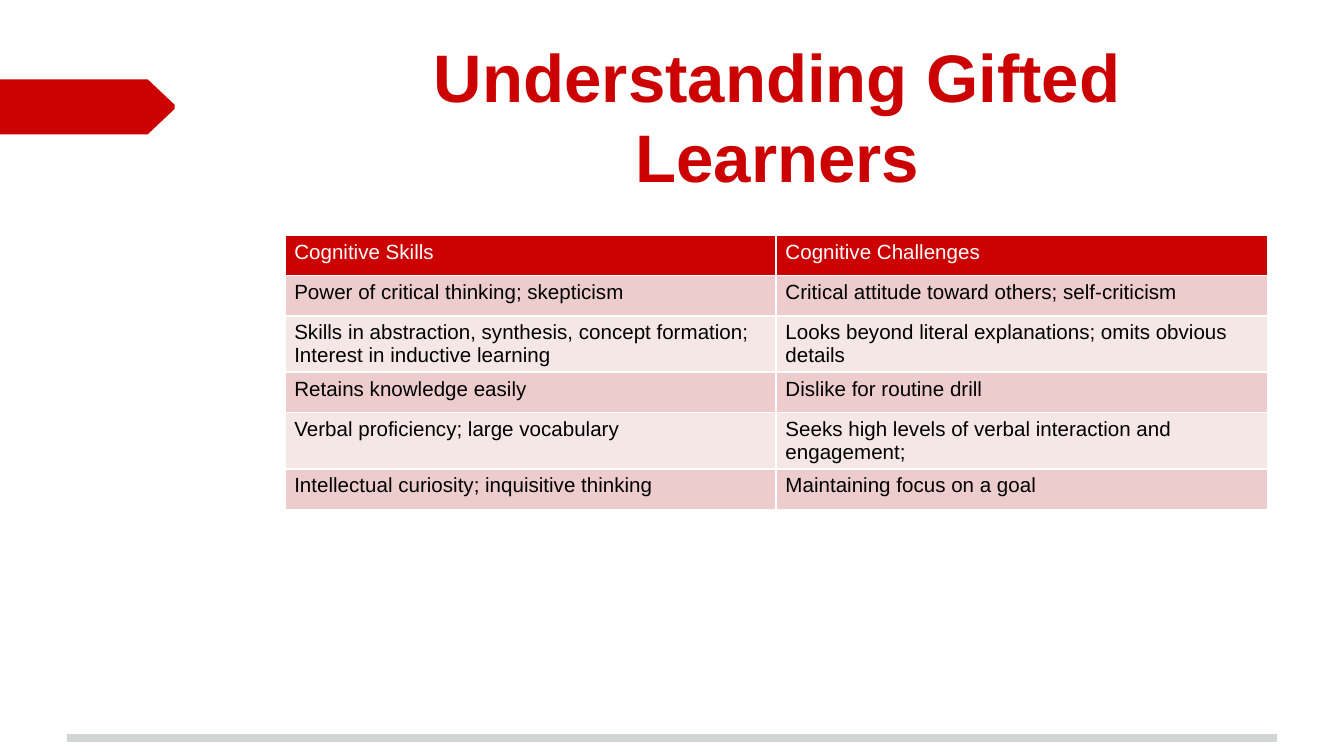
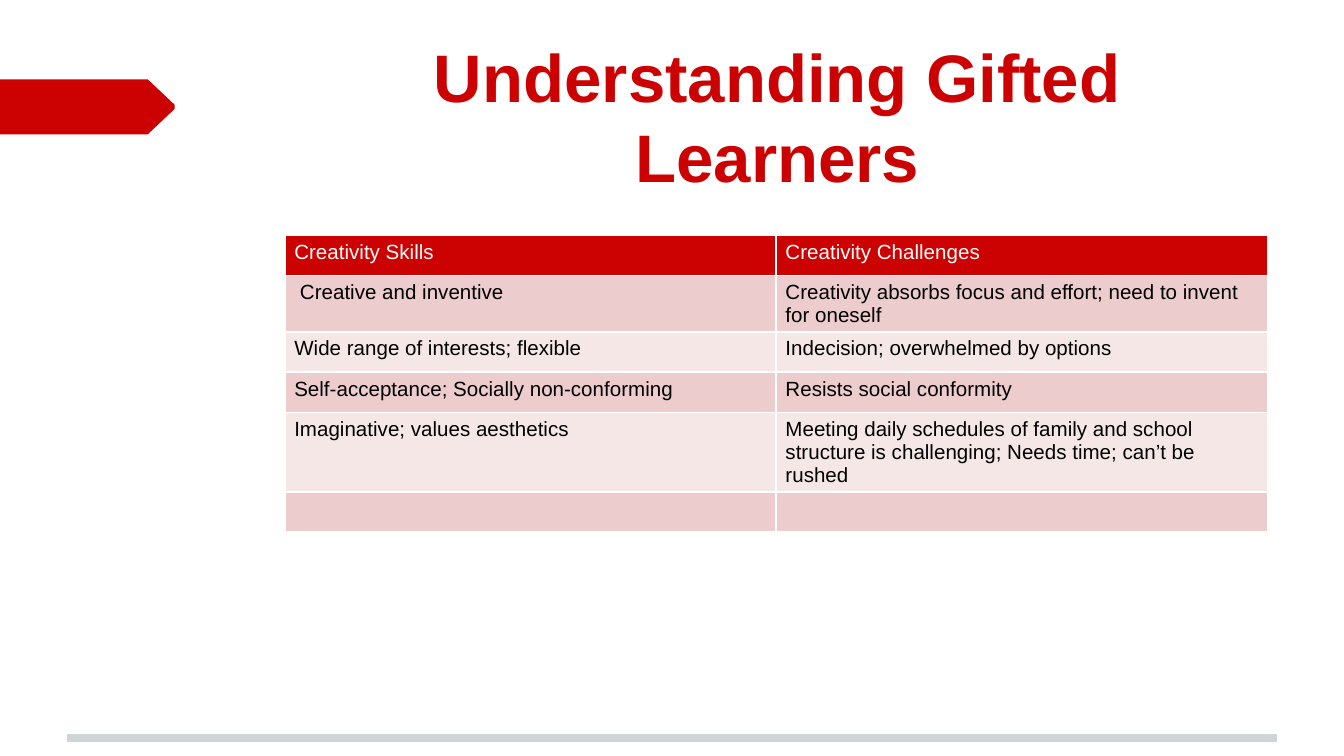
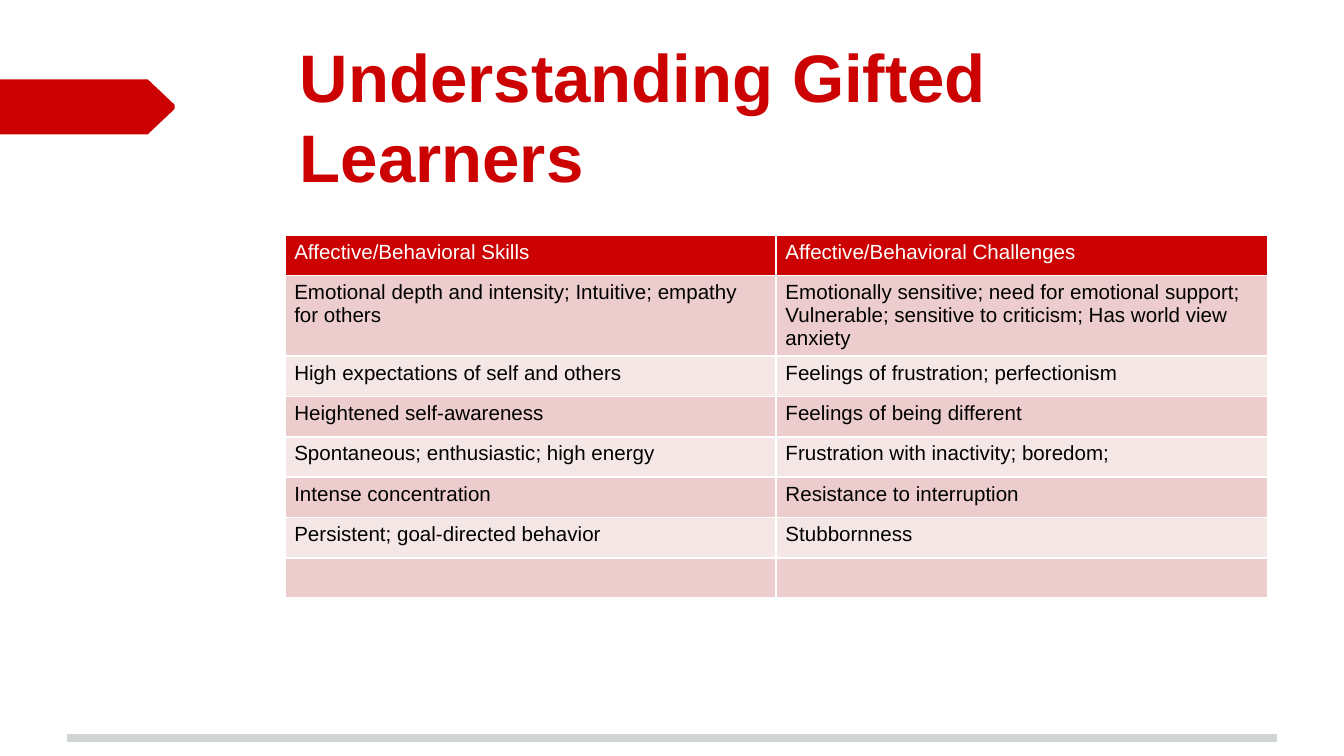
from dataclasses import dataclass

from lxml import etree
from pptx import Presentation
from pptx import util as u
from pptx.dml.color import RGBColor
from pptx.enum import shapes, text
from pptx.oxml import ns


@dataclass(frozen=True)
class Theme:
    font: str = "Arial"
    red: str = "CC0202"
    band_dark: str = "ECCCCC"
    band_light: str = "F6E7E7"
    white: str = "FFFFFF"
    black: str = "000000"
    rule: str = "CFD4D4"
    title_size: int = 36
    table_size: int = 11


THEME = Theme()
TITLE = "Understanding Gifted Learners"
ROW_HEIGHTS = {1: 0.3, 2: 0.42, 3: 0.6}  # by lines of text
CENTER, LEFT = text.PP_ALIGN.CENTER, text.PP_ALIGN.LEFT

# Title alignment and table rows (lines, skill, challenge) of each slide
SLIDES = [
    (CENTER, [
        (1, "Cognitive Skills", "Cognitive Challenges"),
        (1, "Power of critical thinking; skepticism",
         "Critical attitude toward others; self-criticism"),
        (2, "Skills in abstraction, synthesis, concept formation; Interest in inductive learning",
         "Looks beyond literal explanations; omits obvious details"),
        (1, "Retains knowledge easily", "Dislike for routine drill"),
        (2, "Verbal proficiency; large vocabulary",
         "Seeks high levels of verbal interaction and engagement;"),
        (1, "Intellectual curiosity; inquisitive thinking", "Maintaining focus on a goal"),
    ]),
    (CENTER, [
        (1, "Creativity Skills", "Creativity Challenges"),
        (2, " Creative and inventive",
         "Creativity absorbs focus and effort; need to invent for oneself"),
        (1, "Wide range of interests; flexible", "Indecision; overwhelmed by options"),
        (1, "Self-acceptance; Socially non-conforming", "Resists social conformity"),
        (2, "Imaginative; values aesthetics",
         "Meeting daily schedules of family and school structure is challenging; "
         "Needs time; can’t be rushed"),
        (1, "", ""),
    ]),
    (LEFT, [
        (1, "Affective/Behavioral Skills", "Affective/Behavioral Challenges"),
        (3, "Emotional depth and intensity; Intuitive; empathy for others",
         "Emotionally sensitive; need for emotional support; Vulnerable; "
         "sensitive to criticism; Has world view anxiety"),
        (1, "High expectations of self and others", "Feelings of frustration; perfectionism"),
        (1, "Heightened self-awareness", "Feelings of being different"),
        (1, "Spontaneous; enthusiastic; high energy", "Frustration with inactivity; boredom;"),
        (1, "Intense concentration", "Resistance to interruption"),
        (1, "Persistent; goal-directed behavior", "Stubbornness"),
        (1, "", ""),
    ]),
]


def color(value):
    return RGBColor.from_string(value)


def style_font(font, size, value, bold=False):
    font.name, font.size, font.bold = THEME.font, u.Pt(size), bold
    font.color.rgb = color(value)


def set_margins(target, horizontal, vertical):
    target.margin_left = target.margin_right = u.Inches(horizontal)
    target.margin_top = target.margin_bottom = u.Inches(vertical)


def add_footer_rule(slide):
    line = slide.shapes.add_connector(
        shapes.MSO_CONNECTOR.STRAIGHT,
        u.Inches(0.5), u.Inches(5.49), u.Inches(9.5), u.Inches(5.49))
    line.line.color.rgb = color(THEME.rule)
    line.line.width = u.Pt(4)
    etree.SubElement(line.element.spPr, ns.qn("a:effectLst"))
    return line


def add_arrow_tab(slide):
    outline = [(1.1, 0.59), (1.11, 0.6), (1.3, 0.78), (1.3, 0.81),
               (1.11, 0.99), (1.1, 1), (0, 1)]
    builder = slide.shapes.build_freeform(0, u.Inches(0.59))
    builder.add_line_segments([(u.Inches(x), u.Inches(y)) for x, y in outline])
    tab = builder.convert_to_shape()
    tab.shadow.inherit = False
    tab.fill.solid()
    tab.fill.fore_color.rgb = color(THEME.red)
    tab.line.fill.background()
    return tab


def share_on_layout(layout, *decorations):
    """Move decorations to the layout so that every slide shows them."""
    for decoration in decorations:
        layout.shapes.element.append(decoration.element)


def set_title(slide, alignment):
    title = slide.shapes.title
    title.left, title.top = u.Inches(2.13), u.Inches(0.51)
    title.width, title.height = u.Inches(7.31), u.Inches(1.05)
    frame = title.text_frame
    frame.text = TITLE
    frame.word_wrap = True
    frame.auto_size = text.MSO_AUTO_SIZE.NONE
    frame.vertical_anchor = text.MSO_ANCHOR.BOTTOM
    set_margins(frame, 0.1, 0.1)
    paragraph = frame.paragraphs[0]
    paragraph.alignment = alignment
    paragraph.line_spacing = 1.0
    style_font(paragraph.font, THEME.title_size, THEME.red, bold=True)


def fill_cell(cell, content, row_index):
    is_header = row_index == 0
    if is_header:
        background = THEME.red
    else:
        background = THEME.band_dark if row_index % 2 else THEME.band_light
    cell.text = content
    cell.fill.solid()
    cell.fill.fore_color.rgb = color(background)
    set_margins(cell, 0.07, 0.04)
    style_font(cell.text_frame.paragraphs[0].font, THEME.table_size,
               THEME.white if is_header else THEME.black)


def add_skills_table(slide, rows):
    """Add the two-column table; its default style draws the white borders."""
    heights = [ROW_HEIGHTS[lines] for lines, *_ in rows]
    table = slide.shapes.add_table(
        len(rows), 2, u.Inches(2.12), u.Inches(1.75),
        u.Inches(7.31), u.Inches(sum(heights))).table
    for row_index, (_, *contents) in enumerate(rows):
        table.rows[row_index].height = u.Inches(heights[row_index])
        for column_index, content in enumerate(contents):
            fill_cell(table.cell(row_index, column_index), content, row_index)


def main():
    presentation = Presentation()
    presentation.slide_width = u.Inches(10)
    presentation.slide_height = presentation.slide_width * 9 // 16
    layout = presentation.slide_layouts[5]  # title only
    for index, (alignment, rows) in enumerate(SLIDES):
        slide = presentation.slides.add_slide(layout)
        if index == 0:
            share_on_layout(layout, add_footer_rule(slide), add_arrow_tab(slide))
        set_title(slide, alignment)
        add_skills_table(slide, rows)
    presentation.save("out.pptx")


if __name__ == "__main__":
    main()
